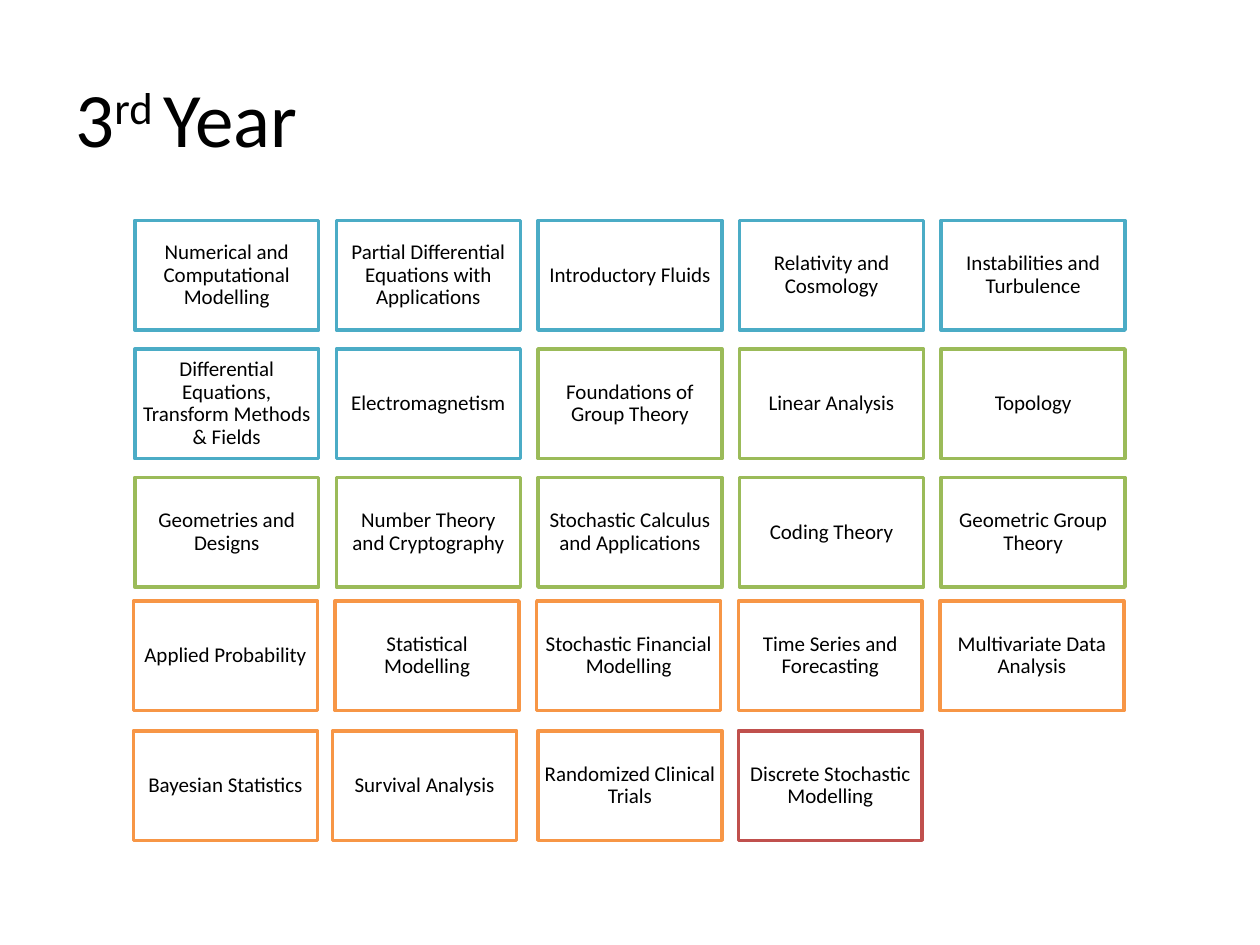
from pptx import Presentation
from pptx.dml.color import RGBColor
from pptx.enum import shapes, text
from pptx.util import Inches, Pt

BLACK = RGBColor(0x00, 0x00, 0x00)
WHITE = RGBColor(0xFF, 0xFF, 0xFF)
TEAL = RGBColor(0x4B, 0xAC, 0xC6)
GREEN = RGBColor(0x9B, 0xBB, 0x59)
ORANGE = RGBColor(0xF7, 0x96, 0x46)
RED = RGBColor(0xC0, 0x50, 0x4D)
FONT = "Calibri"

# Title runs: text, superscript
TITLE = [("3", False), ("rd ", True), ("Year", False)]

# Modules in reading order, by subject colour
MODULES = [
    (TEAL, ["Numerical and Computational Modelling",
            "Partial Differential Equations with Applications",
            "Introductory Fluids", "Relativity and Cosmology",
            "Instabilities and Turbulence",
            "Differential Equations, Transform Methods & Fields",
            "Electromagnetism"]),
    (GREEN, ["Foundations of Group Theory", "Linear Analysis", "Topology",
             "Geometries and Designs", "Number Theory and Cryptography",
             "Stochastic Calculus and Applications", "Coding Theory",
             "Geometric Group Theory"]),
    (ORANGE, ["Applied Probability", "Statistical Modelling",
              "Stochastic Financial Modelling", "Time Series and Forecasting",
              "Multivariate Data Analysis", "Bayesian Statistics",
              "Survival Analysis", "Randomized Clinical Trials"]),
    (RED, ["Discrete Stochastic Modelling"]),
]

# Grid: row tops, left edge of each row, and boxes nudged off their column
COLUMNS, PITCH = 5, 1.6
BOX_W, BOX_H = 1.46, 0.87
ROW_TOPS = [1.75, 2.77, 3.79, 4.77, 5.8]
ROW_LEFTS = [1.07, 1.07, 1.07, 1.06, 1.06]
NUDGES = {"Survival Analysis": -0.02, "Randomized Clinical Trials": 0.01}


def add_run(p, words, size):
    r = p.add_run()
    r.text = words
    r.font.name, r.font.size = FONT, Pt(size)
    r.font.color.rgb = BLACK
    return r


def add_module(s, left, top, name, color):
    sp = s.shapes.add_shape(shapes.MSO_SHAPE.RECTANGLE, Inches(left), Inches(top),
                            Inches(BOX_W), Inches(BOX_H))
    sp.shadow.inherit = False
    sp.fill.solid()
    sp.fill.fore_color.rgb = WHITE
    sp.line.color.rgb = color
    sp.line.width = Pt(2)
    tf = sp.text_frame
    tf.word_wrap = True
    tf.vertical_anchor = text.MSO_ANCHOR.MIDDLE
    tf.margin_left = tf.margin_right = tf.margin_top = tf.margin_bottom = Inches(0.05)
    p = tf.paragraphs[0]
    p.alignment = text.PP_ALIGN.CENTER
    p.line_spacing = 0.9
    add_run(p, name, 12)


def main():
    prs = Presentation()
    prs.slide_width, prs.slide_height = Inches(10), Inches(7.5)
    s = prs.slides.add_slide(prs.slide_layouts[6])

    # Title
    tf = s.shapes.add_textbox(Inches(0.5), Inches(0.3), Inches(9), Inches(1.25)).text_frame
    tf.word_wrap = True
    tf.vertical_anchor = text.MSO_ANCHOR.MIDDLE
    for words, superscript in TITLE:
        r = add_run(tf.paragraphs[0], words, 44)
        if superscript:
            r.font._element.set("baseline", "30000")

    # Module grid
    modules = [(name, color) for color, names in MODULES for name in names]
    for i, (name, color) in enumerate(modules):
        row, col = divmod(i, COLUMNS)
        left = ROW_LEFTS[row] + col * PITCH + NUDGES.get(name, 0)
        add_module(s, left, ROW_TOPS[row], name, color)

    prs.save("out.pptx")


if __name__ == "__main__":
    main()
